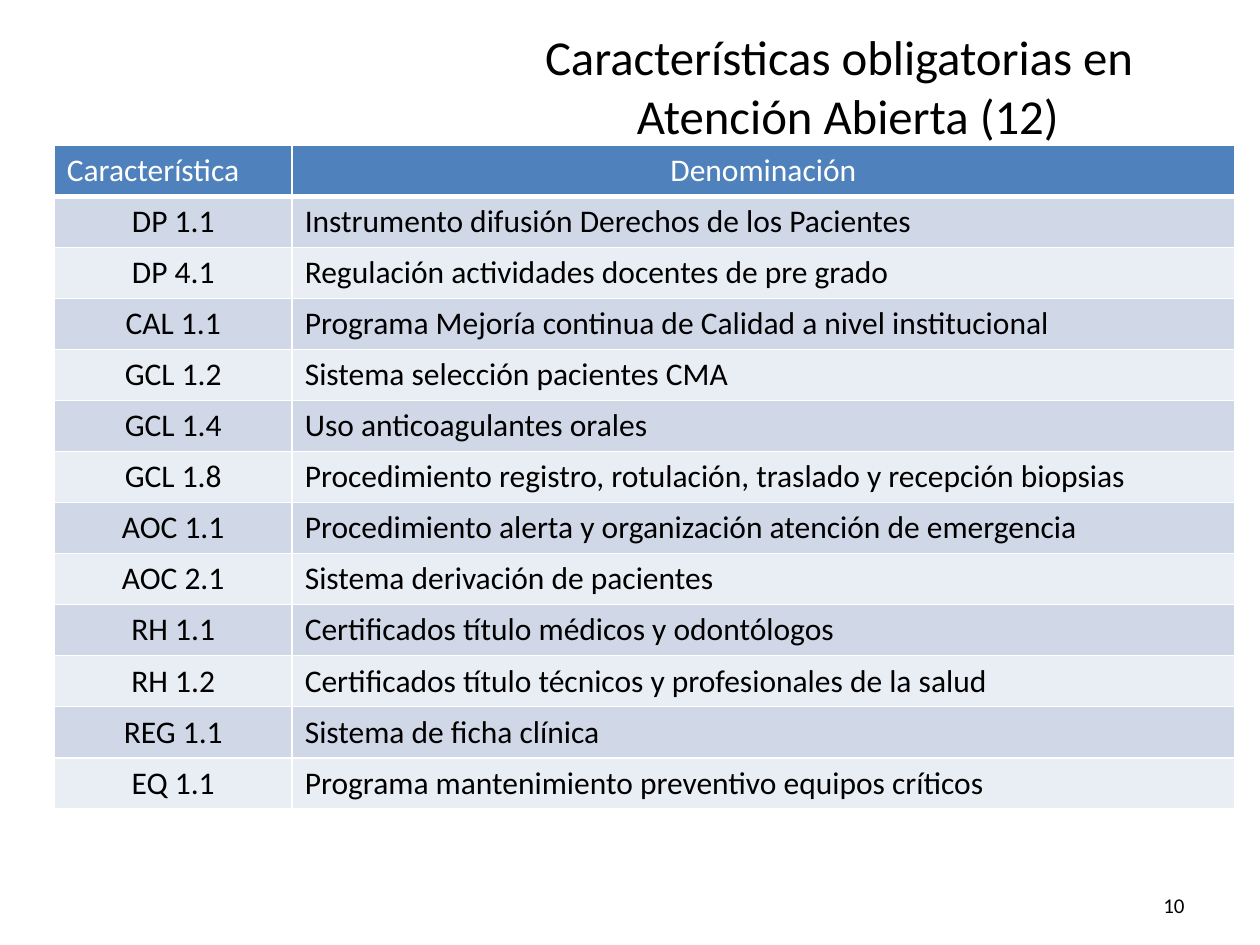
from dataclasses import dataclass

from lxml.etree import SubElement
from pptx import Presentation
from pptx.dml.color import RGBColor
from pptx.enum.text import MSO_ANCHOR, PP_ALIGN
from pptx.oxml.ns import qn
from pptx.util import Pt


@dataclass(frozen=True)
class Theme:
    family: str = "Calibri"
    ink: str = "000000"
    paper: str = "FFFFFF"
    header: str = "4F81BD"
    bands: tuple = ("D0D8E8", "E9EDF4")
    title_size: float = 27.9
    table_size: float = 18
    number_size: float = 12
    rule: float = 1
    header_rule: float = 3


THEME = Theme()

HEADINGS = ("Característica", "Denominación")
REQUIREMENTS = [
    ("DP 1.1", "Instrumento difusión Derechos de los Pacientes"),
    ("DP 4.1", "Regulación actividades docentes de pre grado"),
    ("CAL 1.1", "Programa Mejoría continua de Calidad a nivel institucional"),
    ("GCL 1.2", "Sistema selección pacientes CMA"),
    ("GCL 1.4", "Uso anticoagulantes orales"),
    ("GCL 1.8", "Procedimiento registro, rotulación, traslado y recepción biopsias"),
    ("AOC 1.1", "Procedimiento alerta y organización atención de emergencia"),
    ("AOC 2.1", "Sistema derivación de pacientes"),
    ("RH 1.1", "Certificados título médicos y odontólogos"),
    ("RH 1.2", "Certificados título técnicos y profesionales de la salud"),
    ("REG 1.1", "Sistema de ficha clínica"),
    ("EQ 1.1", "Programa mantenimiento preventivo equipos críticos"),
]


def style(paragraph, size, color, align):
    paragraph.alignment = align
    font = paragraph.font
    font.name = THEME.family
    font.size = Pt(size)
    font.bold = False
    font.color.rgb = RGBColor.from_string(color)


def add_title(slide, left, top, width, height):
    title = slide.shapes.title
    title.left, title.top, title.width, title.height = map(Pt, (left, top, width, height))
    frame = title.text_frame
    frame.text = "Características obligatorias en Atención Abierta (12)"
    frame.word_wrap = True
    frame.vertical_anchor = MSO_ANCHOR.MIDDLE
    frame.margin_left = frame.margin_right = Pt(15)
    frame.margin_top = frame.margin_bottom = 0
    heading = frame.paragraphs[0]
    properties = heading._p.get_or_add_pPr()
    properties.set("marL", str(Pt(27)))
    properties.set("indent", str(Pt(-10)))
    heading.space_before = Pt(0)
    style(heading, THEME.title_size, THEME.ink, PP_ALIGN.CENTER)


def add_borders(cell, bottom):
    properties = cell._tc.get_or_add_tcPr()
    for side, weight in zip("LRTB", (THEME.rule, THEME.rule, THEME.rule, bottom)):
        line = SubElement(properties, qn(f"a:ln{side}"), w=str(Pt(weight)))
        fill = SubElement(line, qn("a:solidFill"))
        SubElement(fill, qn("a:srgbClr"), val=THEME.paper)


def fill_row(cells, texts, alignments, fill, color, bottom):
    for cell, text, align in zip(cells, texts, alignments):
        add_borders(cell, bottom)
        cell.fill.solid()
        cell.fill.fore_color.rgb = RGBColor.from_string(fill)
        cell.text = text
        style(cell.text_frame.paragraphs[0], THEME.table_size, color, align)


def add_requirements(slide, left, top, width, height):
    count = len(REQUIREMENTS) + 1
    table = slide.shapes.add_table(
        count, 2, Pt(left), Pt(top), Pt(width), Pt(height)
    ).table
    code_width = 136
    table.columns[0].width = Pt(code_width)
    table.columns[1].width = Pt(width - code_width)
    for row in table.rows:
        row.height = Pt(height / count)
    header, *body = table.rows
    fill_row(header.cells, HEADINGS, (PP_ALIGN.LEFT, PP_ALIGN.CENTER),
             THEME.header, THEME.paper, THEME.header_rule)
    for index, (row, requirement) in enumerate(zip(body, REQUIREMENTS)):
        fill_row(row.cells, requirement, (PP_ALIGN.CENTER, PP_ALIGN.LEFT),
                 THEME.bands[index % 2], THEME.ink, THEME.rule)


def add_page_number(slide, left, top, width, height):
    frame = slide.shapes.add_textbox(Pt(left), Pt(top), Pt(width), Pt(height)).text_frame
    frame.word_wrap = True
    frame.vertical_anchor = MSO_ANCHOR.BOTTOM
    frame.text = "10"
    style(frame.paragraphs[0], THEME.number_size, THEME.ink, PP_ALIGN.RIGHT)


def main():
    deck = Presentation()
    deck.slide_width, deck.slide_height = Pt(720), Pt(540)
    slide = deck.slides.add_slide(deck.slide_layouts[5])
    add_page_number(slide, 516, 492, 168, 36)
    add_title(slide, 235.5, 14, 471, 70)
    add_requirements(slide, 31, 83, 674.5, 379.5)
    deck.save("out.pptx")


if __name__ == "__main__":
    main()
